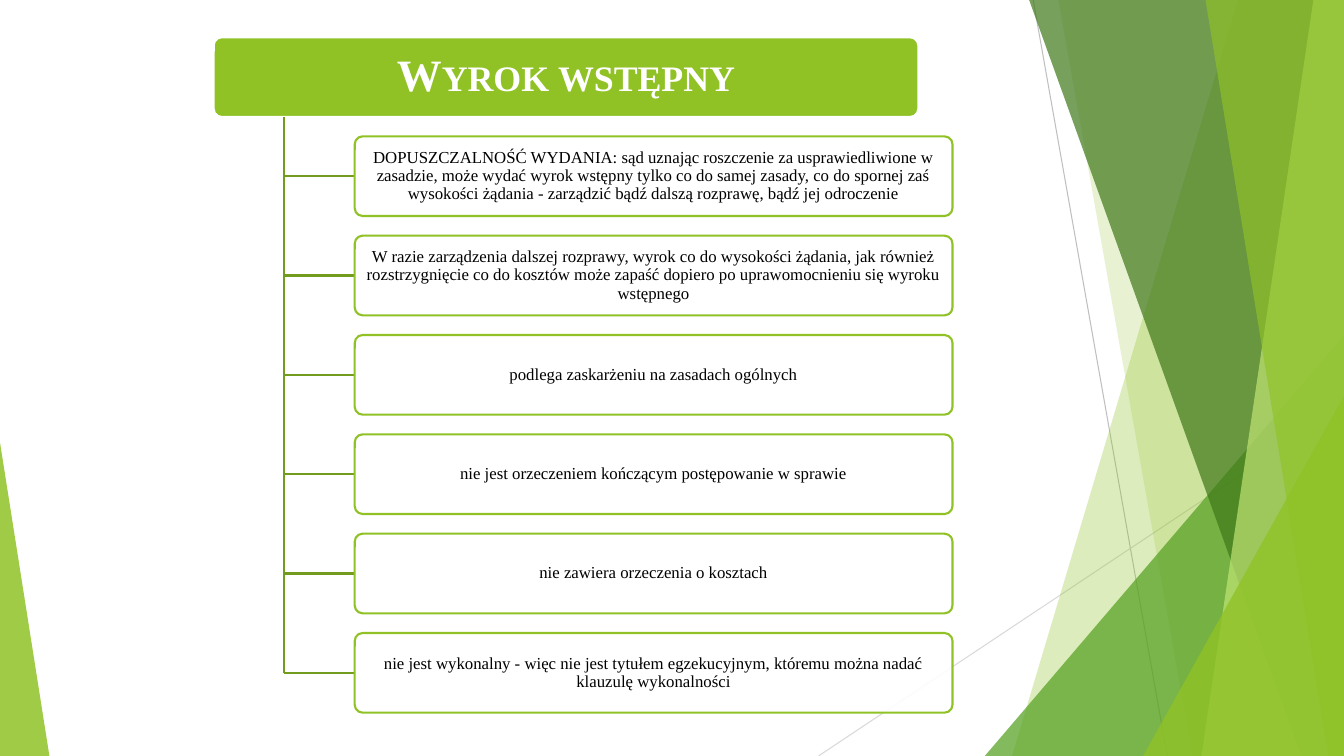
"""Build the slide about the preliminary judgment with its six rules."""
from lxml import etree
from pptx import Presentation
from pptx.dml.color import RGBColor
from pptx.enum.shapes import MSO_CONNECTOR, MSO_SHAPE
from pptx.enum.text import MSO_ANCHOR, MSO_AUTO_SIZE, PP_ALIGN
from pptx.oxml.ns import qn
from pptx.util import Pt

STRAIGHT = MSO_CONNECTOR.STRAIGHT
TRIANGLE = MSO_SHAPE.ISOSCELES_TRIANGLE
ROUNDED = MSO_SHAPE.ROUNDED_RECTANGLE
MIDDLE = MSO_ANCHOR.MIDDLE
NO_AUTOFIT = MSO_AUTO_SIZE.NONE
CENTER = PP_ALIGN.CENTER

WIDTH, HEIGHT = 960, 540
FONT = "Times New Roman"
COLORS = {
    "green": "90C226", "leaf": "54A021", "forest": "3F7819", "lime": "C0E474",
    "rail": "739B1E", "gray": "BFBFBF", "pale": "D9D9D9",
    "white": "FFFFFF", "black": "000000",
}

TITLE = "Wyrok wstępny"
RULES = [
    "DOPUSZCZALNOŚĆ WYDANIA: sąd uznając roszczenie za usprawiedliwione w zasadzie, "
    "może wydać wyrok wstępny tylko co do samej zasady, co do spornej zaś wysokości "
    "żądania - zarządzić bądź dalszą rozprawę, bądź jej odroczenie",
    "W razie zarządzenia dalszej rozprawy, wyrok co do wysokości żądania, jak również "
    "rozstrzygnięcie co do kosztów może zapaść dopiero po uprawomocnieniu się wyroku "
    "wstępnego",
    "podlega zaskarżeniu na zasadach ogólnych",
    "nie jest orzeczeniem kończącym postępowanie w sprawie",
    "nie zawiera orzeczenia o kosztach",
    "nie jest wykonalny - więc nie jest tytułem egzekucyjnym, któremu można nadać "
    "klauzulę wykonalności",
]

HEADER = (152.64, 26.64, 503.28, 56.88)
BOX_LEFT, BOX_TOP, BOX_WIDTH, BOX_HEIGHT = 253.4, 97.4, 427, 56.88
BOX_PITCH = 70.95
RAIL_X = 203


def color(name):
    return RGBColor.from_string(COLORS[name])


def write_text(shape, text, size, ink, bold=False, small_caps=False, margins=(2.4, 1.6)):
    frame = shape.text_frame
    frame.word_wrap = True
    frame.auto_size = NO_AUTOFIT
    frame.vertical_anchor = MIDDLE
    frame.margin_left = frame.margin_right = Pt(margins[0])
    frame.margin_top = frame.margin_bottom = Pt(margins[1])
    paragraph = frame.paragraphs[0]
    paragraph.alignment = CENTER
    paragraph.line_spacing = 0.9
    run = paragraph.add_run()
    run.text = text
    run.font.name = FONT
    run.font.size = Pt(size)
    run.font.bold = bold
    run.font.color.rgb = color(ink)
    if small_caps:
        run._r.get_or_add_rPr().set("cap", "small")


class SlideBuilder:
    def __init__(self, slide):
        self.slide = slide
        self.shapes = slide.shapes

    def style(self, shape, fill, opacity=100, outline=None):
        shape.shadow.inherit = False
        shape.fill.solid()
        shape.fill.fore_color.rgb = color(fill)
        if opacity < 100:
            tint = shape.element.spPr.find(qn("a:solidFill"))[0]
            etree.SubElement(tint, qn("a:alpha"), val=str(opacity * 1000))
        if outline:
            shape.line.color.rgb = color(outline)
            shape.line.width = Pt(1.5)
        else:
            shape.line.fill.background()
        return shape

    def line(self, start, end, ink, width):
        connector = self.shapes.add_connector(STRAIGHT, *map(Pt, start + end))
        connector.line.color.rgb = color(ink)
        connector.line.width = Pt(width)
        etree.SubElement(connector.element.spPr, qn("a:effectLst"))
        return connector

    def polygon(self, points, fill, opacity):
        corners = [(Pt(x), Pt(y)) for x, y in points]
        builder = self.shapes.build_freeform(*corners[0])
        builder.add_line_segments(corners[1:])
        return self.style(builder.convert_to_shape(), fill, opacity)

    def band(self, top_x, bottom_x, fill, opacity):
        points = [(top_x, 0), (WIDTH, 0), (WIDTH, HEIGHT), (bottom_x, HEIGHT)]
        return self.polygon(points, fill, opacity)

    def triangle(self, left, top, width, apex, fill, opacity):
        shape = self.shapes.add_shape(
            TRIANGLE, Pt(left), Pt(top), Pt(width), Pt(HEIGHT - top))
        shape.adjustments[0] = apex
        return self.style(shape, fill, opacity)

    def box(self, bounds, fill, outline, opacity=100):
        shape = self.shapes.add_shape(ROUNDED, *map(Pt, bounds))
        shape.adjustments[0] = 0.1
        return self.style(shape, fill, opacity, outline)

    def title(self, text, bounds):
        shape = self.shapes.title
        shape.left, shape.top, shape.width, shape.height = map(Pt, bounds)
        write_text(shape, text, 32, "white", bold=True, small_caps=True, margins=(5, 3))
        shape.element.getparent().append(shape.element)


def draw_backdrop(builder):
    builder.line((738, 0), (833.76, HEIGHT), "gray", 0.75)
    builder.line((WIDTH, 290.16), (584.64, HEIGHT), "pale", 0.75)
    builder.band(884.16, 722.88, "green", 30)
    builder.band(756, 851.76, "green", 20)
    builder.triangle(703.44, 239.76, 256.56, 1, "leaf", 72)
    builder.band(735.12, 929.52, "forest", 70)
    builder.band(938.16, 858.24, "lime", 70)
    builder.band(861.12, 948.96, "green", 65)
    builder.triangle(816.48, 282.96, 143.52, 1, "green", 80)
    builder.triangle(0, 316.08, 35.28, 0, "green", 85)


def draw_rules(builder):
    builder.box(HEADER, "green", "white")
    builder.title(TITLE, HEADER)
    rail_top = HEADER[1] + HEADER[3]
    rail_bottom = BOX_TOP + BOX_PITCH * (len(RULES) - 1) + BOX_HEIGHT / 2
    builder.line((RAIL_X, rail_top), (RAIL_X, rail_bottom), "rail", 1.5)
    for index, rule in enumerate(RULES):
        top = BOX_TOP + BOX_PITCH * index
        middle = top + BOX_HEIGHT / 2
        branch = builder.line((RAIL_X, middle), (BOX_LEFT, middle), "rail", 1.5)
        box = builder.box((BOX_LEFT, top, BOX_WIDTH, BOX_HEIGHT), "white", "green", 90)
        write_text(box, rule, 12, "black")
        branch.end_connect(box, 1)


def main():
    presentation = Presentation()
    presentation.slide_width = Pt(WIDTH)
    presentation.slide_height = Pt(HEIGHT)
    builder = SlideBuilder(presentation.slides.add_slide(presentation.slide_layouts[5]))
    draw_backdrop(builder)
    draw_rules(builder)
    presentation.save("out.pptx")


if __name__ == "__main__":
    main()
